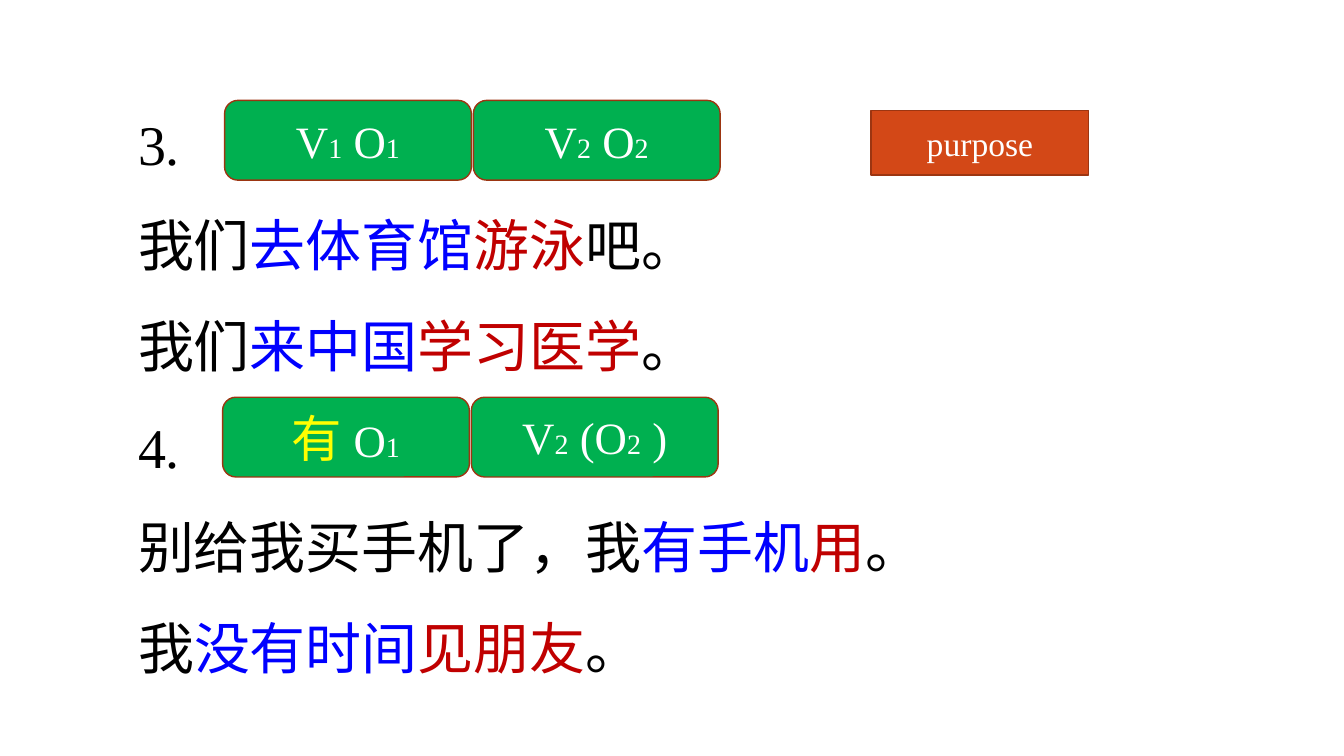
import pptx
import pptx.util
import pptx.dml.color
import pptx.enum.shapes
import pptx.enum.text

Cm, Pt = pptx.util.Cm, pptx.util.Pt
RGBColor = pptx.dml.color.RGBColor
MSO_SHAPE = pptx.enum.shapes.MSO_SHAPE
PP_ALIGN = pptx.enum.text.PP_ALIGN
MSO_ANCHOR = pptx.enum.text.MSO_ANCHOR

FONT = "Times New Roman"
BLACK = RGBColor(0x00, 0x00, 0x00)
WHITE = RGBColor(0xFF, 0xFF, 0xFF)
BLUE = RGBColor(0x00, 0x00, 0xFF)
RED = RGBColor(0xC0, 0x00, 0x00)
YELLOW = RGBColor(0xFF, 0xFF, 0x00)
GREEN = RGBColor(0x00, 0xB0, 0x50)
ORANGE = RGBColor(0xD3, 0x48, 0x17)
BROWN = RGBColor(0x9C, 0x35, 0x11)

# Each run is (text, size in points, colour)
EXAMPLES = [
    [("3.", 40, BLACK)],
    [("我们", 40, BLACK), ("去体育馆", 40, BLUE), ("游泳", 40, RED), ("吧。", 40, BLACK)],
    [("我们", 40, BLACK), ("来中国", 40, BLUE), ("学习医学", 40, RED), ("。", 40, BLACK)],
    [("4.", 40, BLACK)],
    [("别给我买手机了，我", 40, BLACK), ("有手机", 40, BLUE), ("用", 40, RED), ("。", 40, BLACK)],
    [("我", 40, BLACK), ("没有时间", 40, BLUE), ("见朋友", 40, RED), ("。", 40, BLACK)],
]

# Each pattern is (left, top, boxes), lengths in centimetres
PATTERNS = [
    (5.66, 2.53, [
        [("V", 32, WHITE), ("1", 20, WHITE), (" O", 32, WHITE), ("1", 20, WHITE)],
        [("V", 32, WHITE), ("2", 20, WHITE), (" O", 32, WHITE), ("2", 20, WHITE)],
    ]),
    (5.61, 10.01, [
        [("有 ", 36, YELLOW), ("O", 32, WHITE), ("1", 20, WHITE)],
        [("V", 32, WHITE), ("2", 20, WHITE), (" (O", 32, WHITE), ("2", 20, WHITE),
         (" )", 32, WHITE)],
    ]),
]
BOX_W, BOX_H, BOX_STEP = 6.22, 2.01, 6.27
PURPOSE = [("purpose", 24, WHITE)]


def write(tf, paragraphs, align=PP_ALIGN.LEFT, anchor=MSO_ANCHOR.TOP, spacing=None):
    tf.word_wrap = True
    tf.vertical_anchor = anchor
    for i, runs in enumerate(paragraphs):
        p = tf.paragraphs[0] if i == 0 else tf.add_paragraph()
        p.alignment = align
        p.line_spacing = spacing
        for text, size, color in runs:
            r = p.add_run()
            r.text = text
            r.font.name = FONT
            r.font.size = Pt(size)
            r.font.color.rgb = color


def add_box(slide, kind, left, top, width, height, fill, runs):
    sp = slide.shapes.add_shape(kind, Cm(left), Cm(top), Cm(width), Cm(height))
    sp.shadow.inherit = False
    sp.fill.solid()
    sp.fill.fore_color.rgb = fill
    sp.line.color.rgb = BROWN
    sp.line.width = Pt(1)
    write(sp.text_frame, [runs], align=PP_ALIGN.CENTER, anchor=MSO_ANCHOR.MIDDLE)


def main():
    prs = pptx.Presentation()
    prs.slide_width, prs.slide_height = Cm(33.87), Cm(19.05)
    slide = prs.slides.add_slide(prs.slide_layouts[6])

    examples = slide.shapes.add_textbox(Cm(3.23), Cm(1.8), Cm(29.85), Cm(15.65))
    write(examples.text_frame, EXAMPLES, spacing=1.5)

    for left, top, boxes in PATTERNS:
        for i, runs in enumerate(boxes):
            add_box(slide, MSO_SHAPE.ROUNDED_RECTANGLE, left + i * BOX_STEP, top,
                    BOX_W, BOX_H, GREEN, runs)
    add_box(slide, MSO_SHAPE.RECTANGLE, 21.95, 2.78, 5.49, 1.63, ORANGE, PURPOSE)

    prs.save("out.pptx")


if __name__ == "__main__":
    main()
